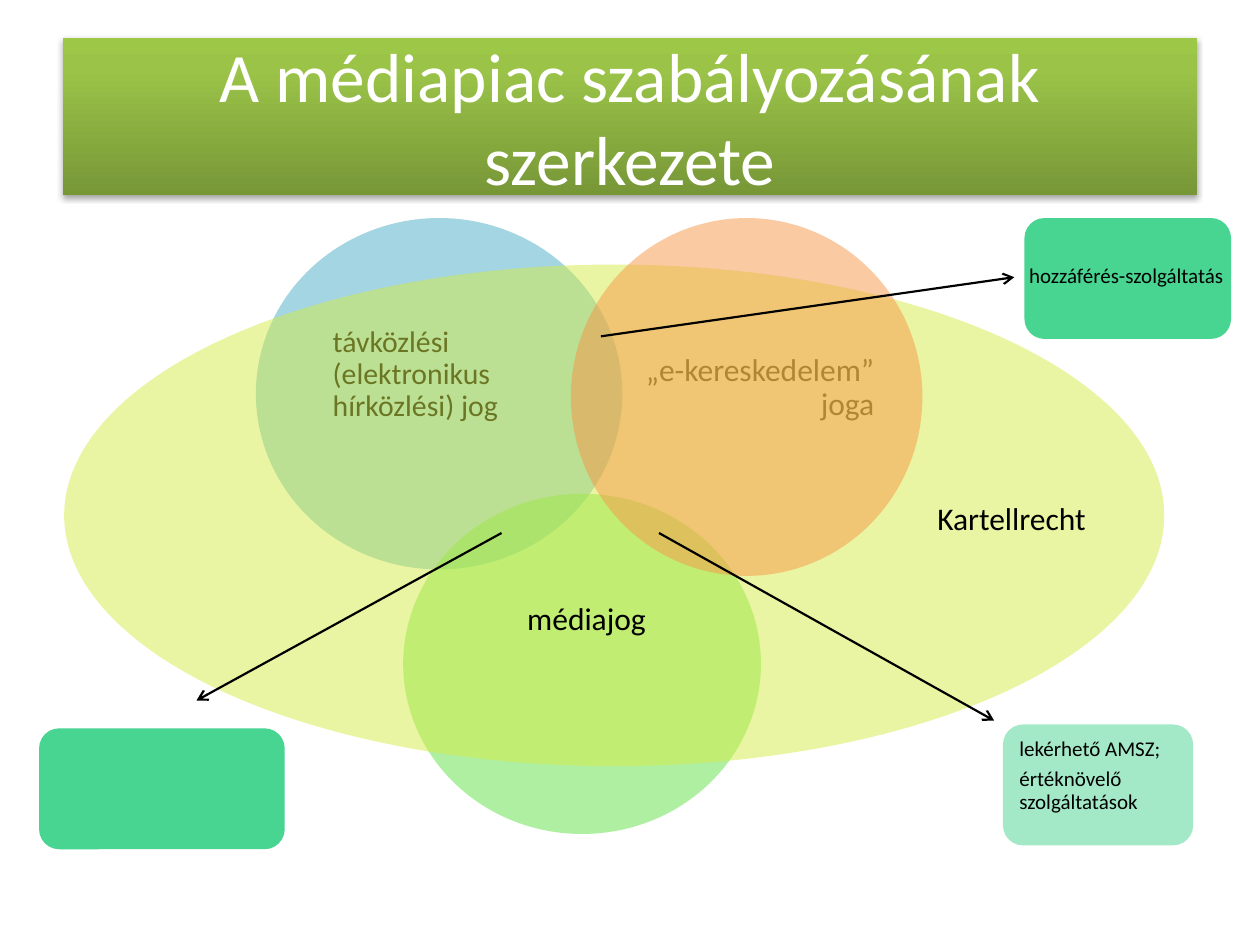
from lxml import etree
from pptx import Presentation
from pptx.dml.color import RGBColor
from pptx.enum import shapes, text
from pptx.oxml import parse_xml
from pptx.oxml.ns import qn
from pptx.util import Pt

NS = 'xmlns:a="http://schemas.openxmlformats.org/drawingml/2006/main"'
FONT = "Calibri"
OVAL = shapes.MSO_SHAPE.OVAL
ROUND = shapes.MSO_SHAPE.ROUNDED_RECTANGLE
LEFT, MID, RIGHT = text.PP_ALIGN.LEFT, text.PP_ALIGN.CENTER, text.PP_ALIGN.RIGHT
CENTER, LOW, TOP = text.MSO_ANCHOR.MIDDLE, text.MSO_ANCHOR.BOTTOM, text.MSO_ANCHOR.TOP

TITLE = "A médiapiac szabályozásának szerkezete"
TITLE_BOX = (36, 21.6, 648, 90)
STOPS = [(0, "779737"), (80, "9BC348"), (100, "9DC746")]

PARTS = [
    ("form", OVAL, (146.2, 124.6, 209.4, 200.8), "4BACC6", 50),
    ("label", ["„e-kereskedelem” joga"], (354.2, 180, 145.4, 84.2), 18, RIGHT, CENTER),
    ("form", ROUND, (573.1, 414, 108.7, 69.1), "48D491", 50),
    ("label", ["távközlési (elektronikus hírközlési) jog"], (190.1, 198, 159.1, 43.9), 17, LEFT, LOW),
    ("form", OVAL, (230.4, 282.2, 204.5, 194.4), "60E146", 50),
    ("label", ["lekérhető AMSZ;", "értéknövelő szolgáltatások"], (582.5, 421.9, 92.2, 43.2), 12, LEFT, CENTER),
    ("form", OVAL, (36.7, 151.2, 628.6, 286.6), "D5EC46", 50),
    ("label", ["médiajog"], (270, 308.9, 130.3, 91.4), 18, MID, CENTER),
    ("form", OVAL, (326.2, 124.6, 200.9, 204.5), "F79646", 50),
    ("form", ROUND, (585.4, 124.6, 118.1, 69.1), "48D491", 100),
    ("form", ROUND, (22.3, 416.2, 140.4, 69.1), "48D491", 100),
    ("note", "hozzáférés-szolgáltatás", (581, 146.2, 134.6, 21.6), 12),
    ("arrow", (376.6, 304.6), (568.1, 411.8)),
    ("arrow", (286.6, 304.6), (112.3, 400.3)),
    ("arrow", (343.4, 192.2), (579.6, 158.4)),
    ("note", "Kartellrecht", (528.5, 281.5, 106.6, 28.8), 18),
]


def pts(nums):
    return [Pt(n) for n in nums]


def rgb(code):
    return RGBColor.from_string(code)


def write(frame, lines, size, color="000000", align=LEFT, anchor=TOP, tight=False):
    frame.word_wrap = True
    frame.vertical_anchor = anchor
    for i, line in enumerate(lines):
        para = frame.paragraphs[0] if i == 0 else frame.add_paragraph()
        para.alignment = align
        if tight:
            para.line_spacing = 0.9
            para.space_after = Pt(round(size * 0.35, 1))
        run = para.add_run()
        run.text = line
        run.font.size = Pt(size)
        run.font.name = FONT
        run.font.color.rgb = rgb(color)


def form(slide, kind, box, color, alpha):
    shape = slide.shapes.add_shape(kind, *pts(box))
    shape.shadow.inherit = False
    shape.line.fill.background()
    shape.fill.solid()
    shape.fill.fore_color.rgb = rgb(color)
    if alpha < 100:
        tone = shape.fill._xPr.find(qn("a:solidFill"))[0]
        etree.SubElement(tone, qn("a:alpha"), val=str(alpha * 1000))
    return shape


def label(slide, lines, box, size, align, anchor):
    frame = slide.shapes.add_textbox(*pts(box)).text_frame
    frame.margin_left = frame.margin_right = 0
    frame.margin_top = frame.margin_bottom = 0
    write(frame, lines, size, align=align, anchor=anchor, tight=True)


def note(slide, line, box, size):
    frame = slide.shapes.add_textbox(*pts(box)).text_frame
    write(frame, [line], size)
    frame.auto_size = text.MSO_AUTO_SIZE.SHAPE_TO_FIT_TEXT


def arrow(slide, start, end):
    link = slide.shapes.add_connector(shapes.MSO_CONNECTOR.STRAIGHT, *pts(start + end))
    link.line.width = Pt(1.25)
    link.line.color.rgb = rgb("000000")
    etree.SubElement(link.line._get_or_add_ln(), qn("a:tailEnd"), type="arrow")
    etree.SubElement(link._element.spPr, qn("a:effectLst"))


def banner(slide):
    shape = form(slide, shapes.MSO_SHAPE.RECTANGLE, TITLE_BOX, STOPS[0][1], 100)
    stops = "".join(
        f'<a:gs pos="{pos * 1000}"><a:srgbClr val="{color}"/></a:gs>' for pos, color in STOPS
    )
    grad = parse_xml(
        f'<a:gradFill {NS} rotWithShape="1"><a:gsLst>{stops}</a:gsLst>'
        '<a:lin ang="16200000" scaled="0"/></a:gradFill>'
    )
    props = shape._element.spPr
    props.replace(props.find(qn("a:solidFill")), grad)
    shade = parse_xml(
        f'<a:outerShdw {NS} blurRad="{Pt(3.1)}" dist="{Pt(1.8)}" dir="5400000" rotWithShape="0">'
        '<a:srgbClr val="000000"><a:alpha val="35000"/></a:srgbClr></a:outerShdw>'
    )
    props.find(qn("a:effectLst")).append(shade)
    write(shape.text_frame, [TITLE], 39.6, "FFFFFF", MID, CENTER)


def main():
    deck = Presentation()
    deck.slide_width, deck.slide_height = Pt(720), Pt(540)
    slide = deck.slides.add_slide(deck.slide_layouts[6])
    banner(slide)
    draw = {"form": form, "label": label, "note": note, "arrow": arrow}
    for kind, *args in PARTS:
        draw[kind](slide, *args)
    deck.save("out.pptx")


if __name__ == "__main__":
    main()
